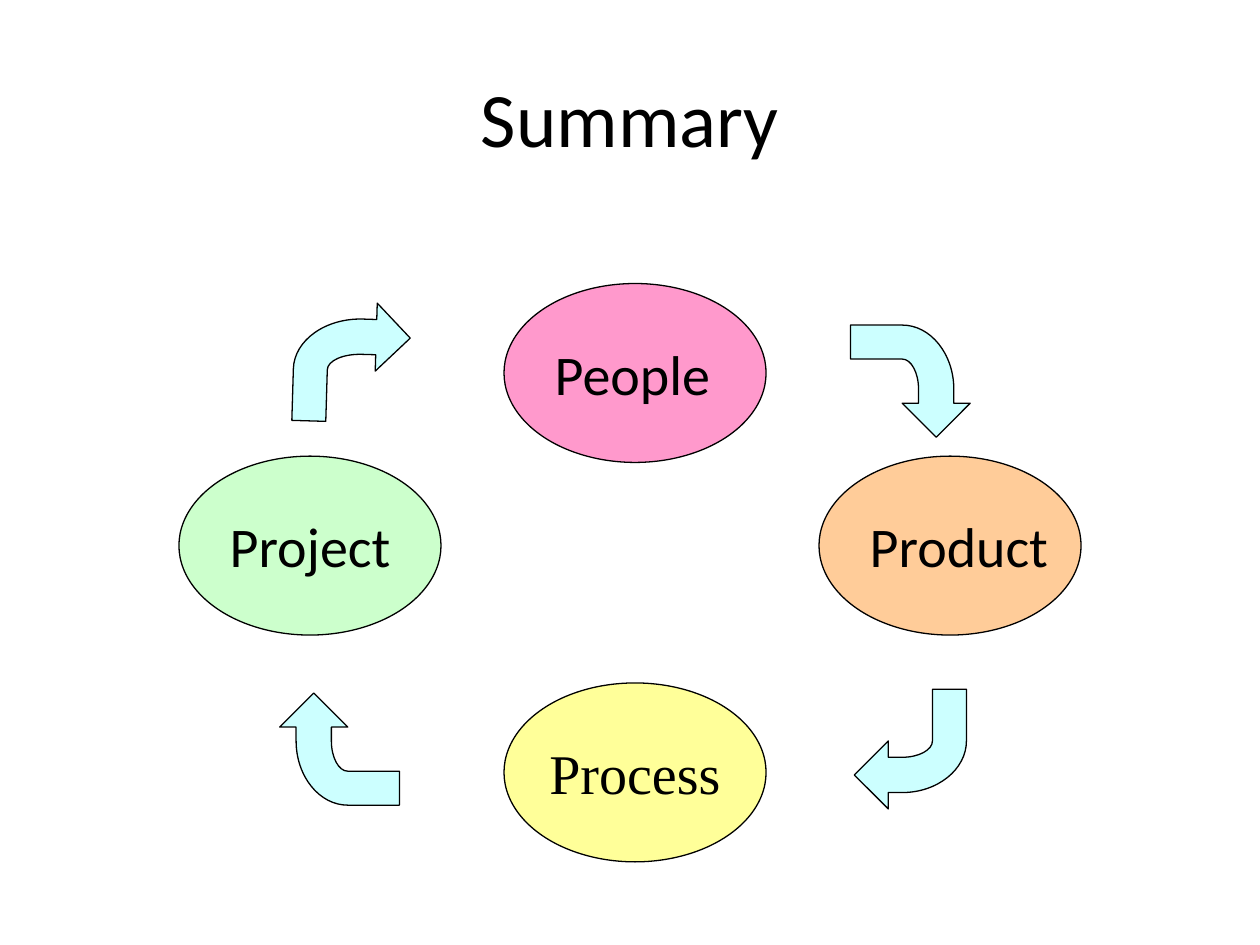
from dataclasses import dataclass

from lxml.etree import SubElement
from pptx import Presentation
from pptx.dml.color import RGBColor
from pptx.enum.shapes import MSO_SHAPE as Shape
from pptx.enum.text import MSO_ANCHOR as Anchor, PP_ALIGN as Align
from pptx.oxml.ns import qn
from pptx.util import Inches, Pt

BLACK = "000000"
ARROW_FILL = "CCFFFF"
ARROW_H = 0.95
OVAL_W, OVAL_H = 2.08, 1.42


@dataclass
class Topic:
    text: str
    left: float
    top: float
    fill: str
    font: str = "Calibri"
    align: Align = Align.LEFT


@dataclass
class Turn:
    left: float
    top: float
    rotation: float
    width: float = 0.89


TOPICS = [
    Topic("People", 4, 2.25, "FF99CC"),
    Topic("Product", 6.5, 3.62, "FFCC99"),
    Topic("Project", 1.42, 3.62, "CCFFCC"),
    Topic("Process", 4, 5.42, "FFFF99", "Times New Roman", Align.CENTER),
]
TURNS = [
    Turn(6.78, 2.55, 90),
    Turn(6.78, 5.47, 180),
    Turn(2.25, 5.47, 270),
    Turn(2.33, 2.4, 1.7, 0.92),
]


def rgb(value: str) -> RGBColor:
    return RGBColor.from_string(value)


def paint(sp, fill: str) -> None:
    sp.shadow.inherit = False
    sp.fill.solid()
    sp.fill.fore_color.rgb = rgb(fill)
    sp.line.color.rgb = rgb(BLACK)
    sp.line.width = Pt(0.75)


def write(tf, text: str, size: float, font: str, align: Align) -> None:
    tf.vertical_anchor = Anchor.MIDDLE
    p = tf.paragraphs[0]
    p.alignment = align
    r = p.add_run()
    r.text = text
    r.font.size = Pt(size)
    r.font.name = font
    r.font.color.rgb = rgb(BLACK)


def add_topic(s, topic: Topic) -> None:
    sp = s.shapes.add_shape(Shape.OVAL, Inches(topic.left), Inches(topic.top),
                            Inches(OVAL_W), Inches(OVAL_H))
    paint(sp, topic.fill)
    sp.text_frame.word_wrap = False
    write(sp.text_frame, topic.text, 32, topic.font, topic.align)


def curve(segment, start: tuple, corner: tuple, end: tuple) -> None:
    segment.tag = qn("a:cubicBezTo")
    segment.clear()
    controls = [tuple(a + 0.55 * (c - a) for a, c in zip(point, corner))
                for point in (start, end)]
    for x, y in (*controls, end):
        SubElement(segment, qn("a:pt"), x=str(Inches(x)), y=str(Inches(y)))


def add_turn(s, turn: Turn) -> None:
    neck, bend = turn.width - 0.27, turn.width - 0.38
    outline = [
        (turn.width, 0.27), (neck, 0), (neck, 0.13),
        (bend, 0.13), (0, 0.54),
        (0, ARROW_H), (0.27, ARROW_H),
        (0.27, 0.54), (bend, 0.41),
        (neck, 0.41), (neck, 0.54),
    ]
    points = [(Inches(x), Inches(y)) for x, y in outline]
    builder = s.shapes.build_freeform(*points[0])
    builder.add_line_segments(points[1:], close=True)
    sp = builder.convert_to_shape(Inches(turn.left), Inches(turn.top))
    segments = list(sp.element.iter(qn("a:lnTo")))
    curve(segments[3], outline[3], (0, 0.13), outline[4])
    curve(segments[7], outline[7], (0.27, 0.41), outline[8])
    sp.rotation = turn.rotation
    paint(sp, ARROW_FILL)


def main() -> None:
    prs = Presentation()
    prs.slide_width, prs.slide_height = Inches(10), Inches(7.5)
    s = prs.slides.add_slide(prs.slide_layouts[5])
    title = s.shapes.title
    title.left, title.top = Inches(0.5), Inches(0.3)
    title.width, title.height = Inches(9), Inches(1.25)
    write(title.text_frame, "Summary", 44, "Calibri", Align.CENTER)
    for topic in TOPICS[:3]:
        add_topic(s, topic)
    for turn in TURNS:
        add_turn(s, turn)
    add_topic(s, TOPICS[3])
    prs.save("out.pptx")


if __name__ == "__main__":
    main()
